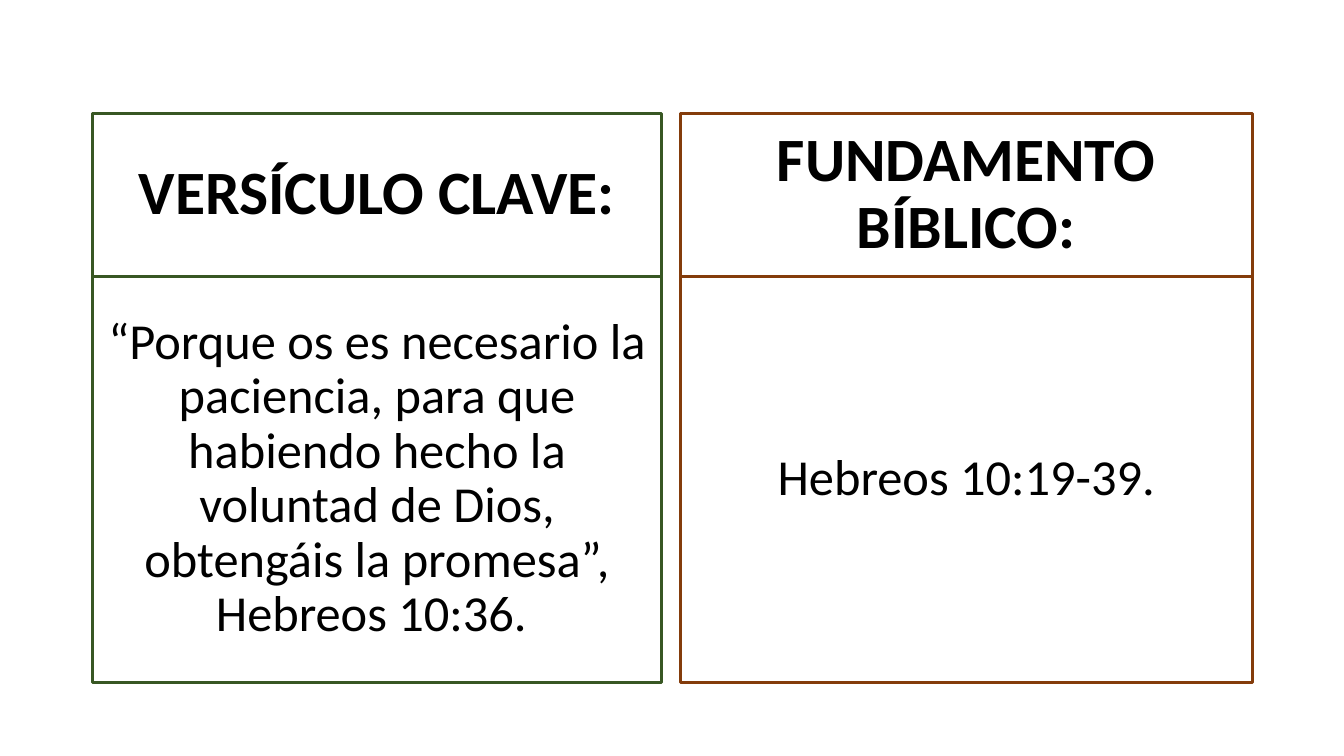
from lxml import etree
from pptx import Presentation
from pptx.dml.color import RGBColor
from pptx.enum.text import MSO_ANCHOR, MSO_AUTO_SIZE, PP_ALIGN
from pptx.oxml.ns import qn
from pptx.util import Emu, Pt

MIDDLE = MSO_ANCHOR.MIDDLE
NO_AUTOFIT = MSO_AUTO_SIZE.NONE
CENTER = PP_ALIGN.CENTER
COMPARISON_LAYOUT = 4
PX = 9144
HEADING_HEIGHT = 161


def px(length):
    return Emu(length * PX)


def color(value):
    return RGBColor.from_string(value)


def fill_panel(shape, box, text, size, bold, border):
    shape.left, shape.top, shape.width, shape.height = map(px, box)
    shape.line.color.rgb = color(border)
    shape.line.width = Pt(2.25)
    frame = shape.text_frame
    frame.word_wrap = True
    frame.auto_size = NO_AUTOFIT
    frame.vertical_anchor = MIDDLE
    paragraph = frame.paragraphs[0]
    properties = paragraph._p.get_or_add_pPr()
    properties.set("marL", "0")
    properties.set("indent", "0")
    etree.SubElement(properties, qn("a:buNone"))
    paragraph.alignment = CENTER
    paragraph.line_spacing = 0.9
    paragraph.space_before = Pt(0)
    run = paragraph.add_run()
    run.text = text
    run.font.name = "Calibri"
    run.font.size = Pt(size)
    run.font.bold = bold
    run.font.color.rgb = color("000000")


def add_column(heading_shape, body_shape, box, heading, body, border):
    left, top, width, height = box
    heading_box = (left, top, width, HEADING_HEIGHT)
    body_box = (left, top + HEADING_HEIGHT, width, height - HEADING_HEIGHT)
    fill_panel(heading_shape, heading_box, heading, 44, True, border)
    fill_panel(body_shape, body_box, body, 36, False, border)


def main():
    presentation = Presentation()
    presentation.slide_width = px(1333)
    presentation.slide_height = px(750)
    slide = presentation.slides.add_slide(presentation.slide_layouts[COMPARISON_LAYOUT])
    title = slide.shapes.title
    title._element.getparent().remove(title._element)
    verse_heading, verse_body, passage_heading, passage_body = slide.placeholders
    add_column(
        verse_heading, verse_body, (92, 113, 564, 564),
        "VERSÍCULO CLAVE:",
        "“Porque os es necesario la paciencia, para que habiendo hecho la "
        "voluntad de Dios, obtengáis la promesa”, Hebreos 10:36. ",
        "385723",
    )
    add_column(
        passage_heading, passage_body, (675, 113, 567, 564),
        "FUNDAMENTO BÍBLICO:", "Hebreos 10:19-39.", "843C0B",
    )
    presentation.save("out.pptx")


if __name__ == "__main__":
    main()
